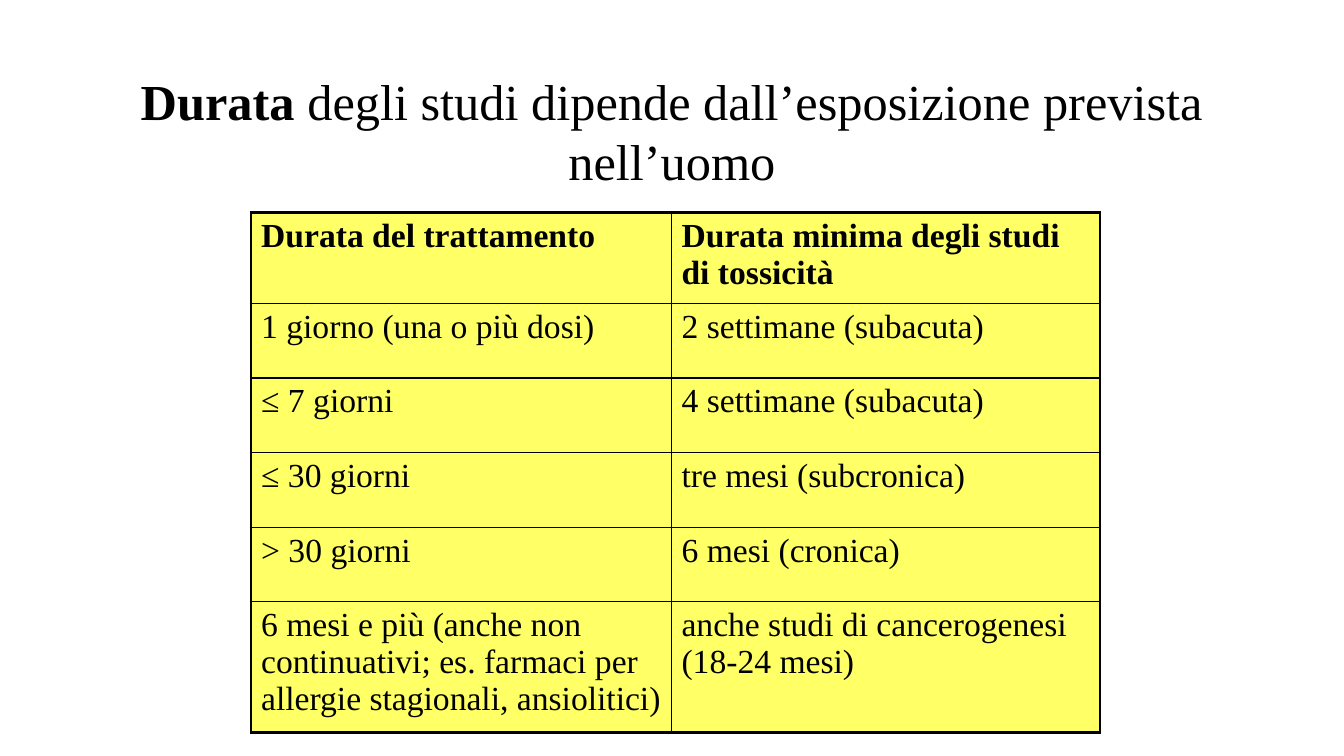
from pptx import Presentation
from pptx.dml.color import RGBColor
from pptx.enum.text import MSO_ANCHOR, MSO_AUTO_SIZE, PP_ALIGN
from pptx.oxml.ns import qn
from pptx.util import Inches, Pt
from lxml import etree

MIDDLE = MSO_ANCHOR.MIDDLE
NO_FIT = MSO_AUTO_SIZE.NONE
CENTER = PP_ALIGN.CENTER
LEFT = PP_ALIGN.LEFT

TITLE = [("Durata", True),
         (" degli studi dipende dall’esposizione prevista nell’uomo", False)]
ROWS = [
    ("Durata del trattamento", "Durata minima degli studi di tossicità"),
    ("1 giorno (una o più dosi)", "2 settimane (subacuta)"),
    ("≤ 7 giorni", "4 settimane (subacuta)"),
    ("≤ 30 giorni", "tre mesi (subcronica)"),
    ("> 30 giorni", "6 mesi (cronica)"),
    ("6 mesi e più (anche non continuativi; es. farmaci per "
     "allergie stagionali, ansiolitici)",
     "anche studi di cancerogenesi (18-24 mesi)"),
]
WIDTHS = [4.17, 4.25]
HEIGHTS = [0.9] + [0.74] * 4 + [1.3]
COLORS = {"ink": "000000", "cell": "FFFF66"}
FONT = "Times New Roman"
THIN, THICK = Pt(1), Pt(2.25)


def add_run(para, text, size, bold):
    run = para.add_run()
    run.text = text
    run.font.name = FONT
    run.font.size = Pt(size)
    run.font.bold = bold
    run.font.color.rgb = RGBColor.from_string(COLORS["ink"])


def add_border(cell, side, width):
    props = cell._tc.get_or_add_tcPr()
    line = etree.SubElement(props, qn("a:ln" + side), w=str(width))
    fill = etree.SubElement(line, qn("a:solidFill"))
    etree.SubElement(fill, qn("a:srgbClr"), val=COLORS["ink"])


def add_title(slide):
    title = slide.shapes.title
    title.left, title.top = Inches(1), Inches(0.67)
    title.width, title.height = Inches(11.33), Inches(1.25)
    frame = title.text_frame
    frame.word_wrap = True
    frame.auto_size = NO_FIT
    frame.vertical_anchor = MIDDLE
    para = frame.paragraphs[0]
    para.alignment = CENTER
    for text, bold in TITLE:
        add_run(para, text, 36, bold)


def add_grid(slide):
    table = slide.shapes.add_table(
        len(ROWS), len(WIDTHS), Inches(2.49), Inches(2.11),
        Inches(sum(WIDTHS)), Inches(sum(HEIGHTS))).table
    for col, width in zip(table.columns, WIDTHS):
        col.width = Inches(width)
    for row, height in zip(table.rows, HEIGHTS):
        row.height = Inches(height)
    for r, texts in enumerate(ROWS):
        for c, text in enumerate(texts):
            cell = table.cell(r, c)
            outer = {"L": c == 0, "R": c == len(WIDTHS) - 1,
                     "T": r == 0, "B": r == len(ROWS) - 1}
            for side, edge in outer.items():
                add_border(cell, side, THICK if edge else THIN)
            cell.fill.solid()
            cell.fill.fore_color.rgb = RGBColor.from_string(COLORS["cell"])
            para = cell.text_frame.paragraphs[0]
            para.alignment = LEFT
            add_run(para, text, 24, r == 0)


def main():
    deck = Presentation()
    deck.slide_width, deck.slide_height = Inches(13.33), Inches(7.5)
    slide = deck.slides.add_slide(deck.slide_layouts[5])
    add_title(slide)
    add_grid(slide)
    deck.save("out.pptx")


if __name__ == "__main__":
    main()
